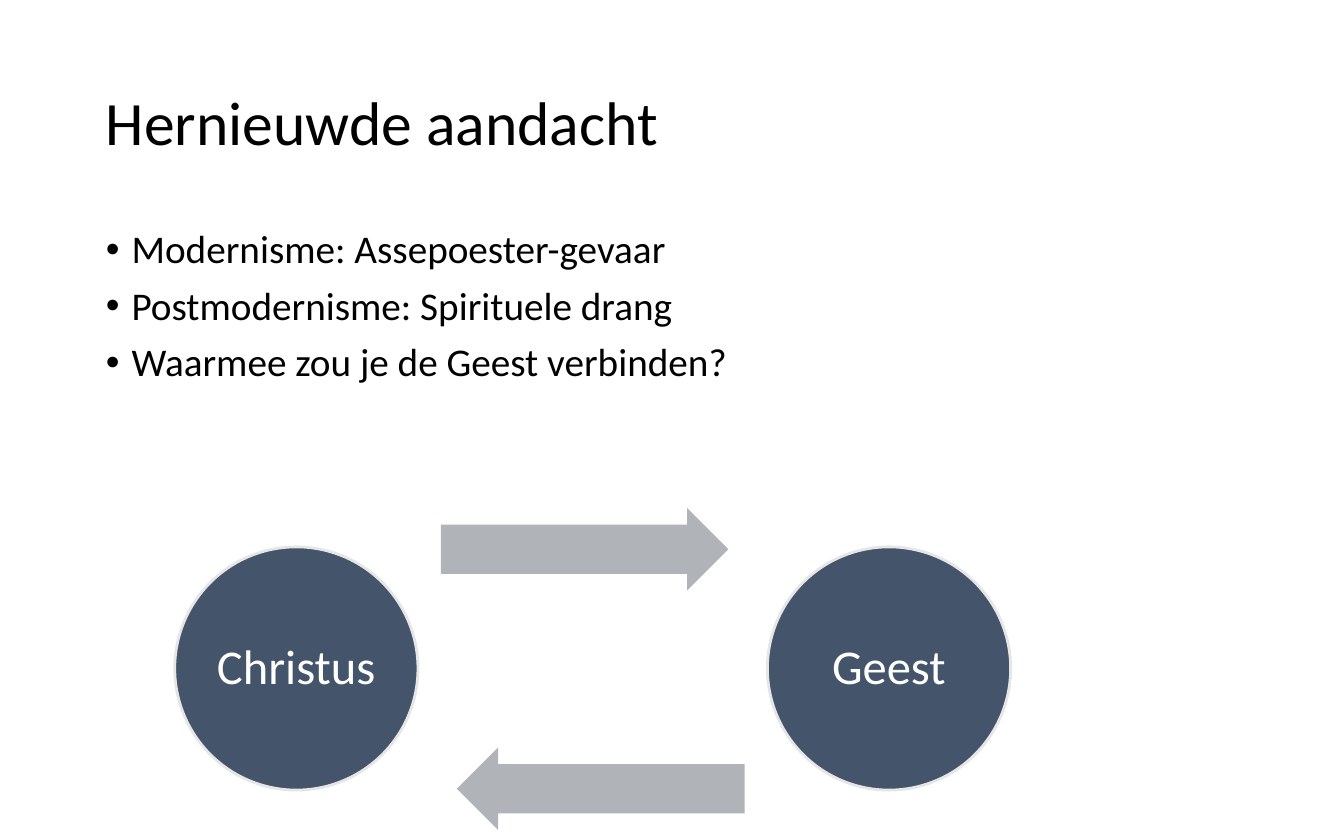
"""Build the slide about renewed attention for the Spirit."""
from dataclasses import dataclass

from lxml.etree import SubElement
from pptx import Presentation
from pptx.dml.color import RGBColor as Rgb
from pptx.enum.shapes import MSO_SHAPE as Preset
from pptx.enum.text import MSO_ANCHOR as Anchor, PP_ALIGN as Align
from pptx.oxml.ns import qn
from pptx.util import Inches, Pt


@dataclass(frozen=True)
class Theme:
    """Colours, font and type sizes of the slide."""
    ink: str = "000000"
    circle: str = "44546A"
    rim: str = "E7E6E6"
    arrow: str = "B0B4B9"
    label: str = "FFFFFF"
    font: str = "Calibri"
    title_size: float = 33
    body_size: float = 21
    label_size: float = 26


class Board:
    """Draw styled elements on a slide with a grid of 100 columns and 100 rows."""

    def __init__(self, deck, theme):
        """Add a blank slide and keep its grid and style."""
        self.slide = deck.slides.add_slide(deck.slide_layouts[6])
        self.theme = theme
        self.column = deck.slide_width / 100
        self.row = deck.slide_height / 100

    def place(self, left, top, width, height):
        """Turn columns and rows into lengths."""
        return [round(cells * unit) for cells, unit in
                zip((left, top, width, height), (self.column, self.row) * 2)]

    def fill_text(self, frame, lines, size, color, align=Align.LEFT, **frame_format):
        """Fill a text frame with one paragraph a line."""
        for name, value in frame_format.items():
            setattr(frame, name, value)
        for number, line in enumerate(lines):
            paragraph = frame.add_paragraph() if number else frame.paragraphs[0]
            paragraph.text = line
            paragraph.alignment = align
            paragraph.line_spacing = 0.9
            for name, value in {"name": self.theme.font, "size": Pt(size)}.items():
                setattr(paragraph.runs[0].font, name, value)
            paragraph.runs[0].font.color.rgb = Rgb.from_string(color)
        return frame.paragraphs

    def title(self, text, *cell):
        """Add the heading."""
        heading = self.slide.shapes.add_textbox(*self.place(*cell))
        self.fill_text(heading.text_frame, [text], self.theme.title_size, self.theme.ink,
                       word_wrap=True, vertical_anchor=Anchor.MIDDLE)

    def bullets(self, lines, *cell):
        """Add a bulleted list."""
        points = self.slide.shapes.add_textbox(*self.place(*cell))
        for point in self.fill_text(points.text_frame, lines, self.theme.body_size,
                                    self.theme.ink, word_wrap=True):
            point.space_before = Pt(7.5)
            properties = point._p.get_or_add_pPr()
            indent = Inches(0.19)
            for name, value in {"marL": indent, "indent": -indent}.items():
                properties.set(name, str(value))
            SubElement(properties, qn("a:buFont"), typeface="Arial")
            SubElement(properties, qn("a:buChar"), char="•")

    def shape(self, preset, color, *cell):
        """Add a flat filled shape without an outline."""
        figure = self.slide.shapes.add_shape(preset, *self.place(*cell))
        figure.shadow.inherit = False
        figure.fill.solid()
        figure.fill.fore_color.rgb = Rgb.from_string(color)
        figure.line.fill.background()
        return figure

    def circle(self, text, *cell):
        """Add a rimmed circle with a centred label."""
        disc = self.shape(Preset.OVAL, self.theme.circle, *cell)
        disc.line.color.rgb = Rgb.from_string(self.theme.rim)
        disc.line.width = Pt(1.5)
        margins = {f"margin_{side}": Inches(0.04)
                   for side in ("left", "top", "right", "bottom")}
        self.fill_text(disc.text_frame, [text], self.theme.label_size, self.theme.label,
                       Align.CENTER, word_wrap=False, vertical_anchor=Anchor.MIDDLE,
                       **margins)

    def arrow(self, rotation, *cell):
        """Add a block arrow turned by the given angle."""
        pointer = self.shape(Preset.RIGHT_ARROW, self.theme.arrow, *cell)
        pointer.adjustments[0] = 0.6
        pointer.adjustments[1] = 0.5
        pointer.rotation = rotation


def main():
    """Compose and save the slide."""
    deck = Presentation()
    deck.slide_width, deck.slide_height = Inches(10), Inches(6.25)
    board = Board(deck, Theme())
    board.title("Hernieuwde aandacht", 6.9, 5.3, 86.2, 19.3)
    board.bullets(["Modernisme: Assepoester-gevaar",
                   "Postmodernisme: Spirituele drang",
                   "Waarmee zou je de Geest verbinden?"], 6.9, 26.6, 86.2, 63.5)
    cycle = [("Christus", 13, 0, 32.8, 60.5), ("Geest", 57.1, 180, 34, 89)]
    for person, circle_left, rotation, arrow_left, arrow_top in cycle:
        board.circle(person, circle_left, 65.1, 18.1, 28.96)
        board.arrow(rotation, arrow_left, arrow_top, 21.4, 9.8)
    deck.save("out.pptx")


if __name__ == "__main__":
    main()
